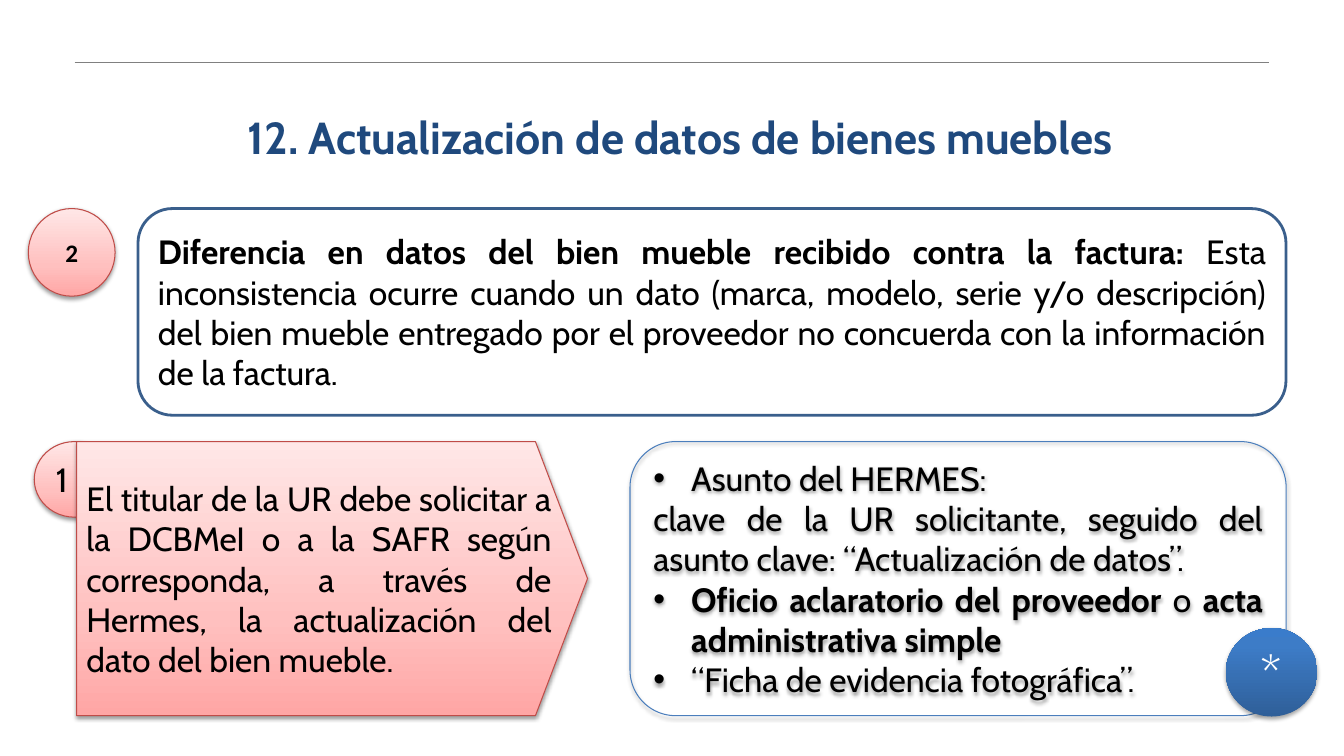
from dataclasses import dataclass
from typing import Optional

from lxml.etree import SubElement
from pptx import Presentation
from pptx.dml.color import RGBColor
from pptx.enum.shapes import MSO_CONNECTOR, MSO_SHAPE
from pptx.enum.text import MSO_ANCHOR, PP_ALIGN
from pptx.oxml.ns import qn
from pptx.util import Pt

BLACK = RGBColor(0x00, 0x00, 0x00)
WHITE = RGBColor(0xFF, 0xFF, 0xFF)
NAVY = RGBColor(0x1F, 0x49, 0x7D)
GREY = RGBColor(0x80, 0x80, 0x80)
RED_EDGE = RGBColor(0xBF, 0x4C, 0x48)
BLUE_EDGE = RGBColor(0x3A, 0x5F, 0x8C)
LIGHT_BLUE_EDGE = RGBColor(0x4B, 0x7E, 0xBC)

# Gradients run from bottom to top: (position in percent, colour)
PINK = ((0, RGBColor(0xFF, 0xA6, 0xA5)), (35, RGBColor(0xFF, 0xC0, 0xBF)),
        (100, RGBColor(0xFF, 0xE7, 0xE7)))
BLUE = ((0, RGBColor(0x2F, 0x5F, 0x99)), (80, RGBColor(0x3D, 0x7C, 0xC7)),
        (100, RGBColor(0x3A, 0x7C, 0xCB)))

HANGING = Pt(27)


@dataclass(frozen=True)
class Line:
    """One paragraph: pieces of (text, bold)."""
    pieces: tuple
    bullet: bool = False


@dataclass(frozen=True)
class Panel:
    geometry: MSO_SHAPE
    box: tuple
    lines: tuple
    gradient: Optional[tuple] = None
    edge: Optional[RGBColor] = None
    edge_width: float = 0.75
    shadow_alpha: int = 0
    adjustment: Optional[float] = None
    align: PP_ALIGN = PP_ALIGN.JUSTIFY
    font: str = "Cabin"
    size: int = 24
    color: RGBColor = BLACK


PANELS = (
    # Definition of the inconsistency
    Panel(MSO_SHAPE.FLOWCHART_CONNECTOR, (20.2, 149, 62, 62.6),
          (Line((("2", True),)),), PINK, RED_EDGE, shadow_alpha=38,
          align=PP_ALIGN.CENTER, font="Calibri", size=18),
    Panel(MSO_SHAPE.ROUNDED_RECTANGLE, (98.6, 149, 820, 147.6),
          (Line((("Diferencia en datos del bien mueble recibido contra la factura: ", True),
                 ("Esta inconsistencia ocurre cuando un dato (marca, modelo, serie y/o "
                  "descripción) del bien mueble entregado por el proveedor no concuerda "
                  "con la información de la factura.", False))),),
          edge=BLUE_EDGE, edge_width=2),
    # Step 1 and its requirements
    Panel(MSO_SHAPE.FLOWCHART_CONNECTOR, (24.5, 315.4, 57.6, 54),
          (Line((("1", False),)),), PINK, RED_EDGE, shadow_alpha=38,
          align=PP_ALIGN.LEFT),
    Panel(MSO_SHAPE.PENTAGON, (54.7, 315.4, 365, 195.8),
          (Line((("El titular de la UR debe solicitar a la DCBMeI o a la SAFR según "
                  "corresponda, a través de Hermes, la actualización del dato del bien "
                  "mueble.", False),)),),
          PINK, RED_EDGE, shadow_alpha=38, adjustment=0.19),
    Panel(MSO_SHAPE.ROUNDED_RECTANGLE, (450, 315.4, 468.7, 195.8),
          (Line((("Asunto del HERMES:", False),), bullet=True),
           Line((("clave de la UR solicitante, seguido del asunto clave: "
                  "“Actualización de datos”.", False),)),
           Line((("Oficio aclaratorio del proveedor ", True), ("o", False),
                 (" acta administrativa simple", True)), bullet=True),
           Line((("“Ficha de evidencia fotográfica”.", False),), bullet=True)),
          edge=LIGHT_BLUE_EDGE, shadow_alpha=38),
    # Corner badge
    Panel(MSO_SHAPE.FLOWCHART_CONNECTOR, (875.5, 448.6, 65.5, 63.2),
          (Line((("*", False),)),), BLUE, shadow_alpha=35,
          align=PP_ALIGN.CENTER, size=36, color=WHITE),
)


def set_gradient(shape, stops: tuple) -> None:
    shape.fill.gradient()
    shape.fill.gradient_angle = 90
    stop_list = shape._element.spPr.find(qn("a:gradFill")).find(qn("a:gsLst"))
    for old_stop in list(stop_list):
        stop_list.remove(old_stop)
    for position, color in stops:
        stop = SubElement(stop_list, qn("a:gs"), pos=str(position * 1000))
        SubElement(stop, qn("a:srgbClr"), val=str(color))


def set_shadow(shape, alpha: int) -> None:
    effects = shape._element.spPr.find(qn("a:effectLst"))
    shadow = SubElement(effects, qn("a:outerShdw"), blurRad=str(Pt(3.1)),
                        dist=str(Pt(1.6)), dir="5400000", rotWithShape="0")
    color = SubElement(shadow, qn("a:srgbClr"), val=str(BLACK))
    SubElement(color, qn("a:alpha"), val=str(alpha * 1000))


def write_line(paragraph, line: Line, panel: Panel) -> None:
    paragraph.alignment = panel.align
    if line.bullet:
        properties = paragraph._p.get_or_add_pPr()
        properties.set("marL", str(HANGING))
        properties.set("indent", str(-HANGING))
        SubElement(properties, qn("a:buFont"), typeface="Arial")
        SubElement(properties, qn("a:buChar"), char="•")
    for text, bold in line.pieces:
        run = paragraph.add_run()
        run.text = text
        run.font.name = panel.font
        run.font.size = Pt(panel.size)
        run.font.bold = bold
        run.font.color.rgb = panel.color


def draw_panel(slide, panel: Panel) -> None:
    shape = slide.shapes.add_shape(panel.geometry, *map(Pt, panel.box))
    shape.shadow.inherit = False
    if panel.adjustment is not None:
        shape.adjustments[0] = panel.adjustment
    if panel.gradient:
        set_gradient(shape, panel.gradient)
    else:
        shape.fill.background()
    if panel.edge is not None:
        shape.line.color.rgb = panel.edge
        shape.line.width = Pt(panel.edge_width)
    else:
        shape.line.fill.background()
    if panel.shadow_alpha:
        set_shadow(shape, panel.shadow_alpha)
    frame = shape.text_frame
    frame.word_wrap = True
    frame.vertical_anchor = MSO_ANCHOR.MIDDLE
    for index, line in enumerate(panel.lines):
        paragraph = frame.add_paragraph() if index else frame.paragraphs[0]
        write_line(paragraph, line, panel)


def draw_header(slide) -> None:
    rule = slide.shapes.add_connector(
        MSO_CONNECTOR.STRAIGHT, Pt(53.3), Pt(45), Pt(906.5), Pt(45))
    rule.line.color.rgb = GREY
    rule.line.width = Pt(0.75)
    SubElement(rule._element.spPr, qn("a:effectLst"))

    title = slide.shapes.add_textbox(Pt(53.3), Pt(45.4), Pt(865.4), Pt(105))
    frame = title.text_frame
    frame.word_wrap = True
    frame.vertical_anchor = MSO_ANCHOR.MIDDLE
    frame.text = "12. Actualización de datos de bienes muebles"
    heading = frame.paragraphs[0]
    heading.alignment = PP_ALIGN.CENTER
    font = heading.runs[0].font
    font.name, font.size, font.bold = "Cabin", Pt(32), True
    font.color.rgb = NAVY


def main() -> None:
    presentation = Presentation()
    presentation.slide_width = Pt(960)
    presentation.slide_height = Pt(540)
    slide = presentation.slides.add_slide(presentation.slide_layouts[6])
    draw_header(slide)
    for panel in PANELS:
        draw_panel(slide, panel)
    presentation.save("out.pptx")


if __name__ == "__main__":
    main()
